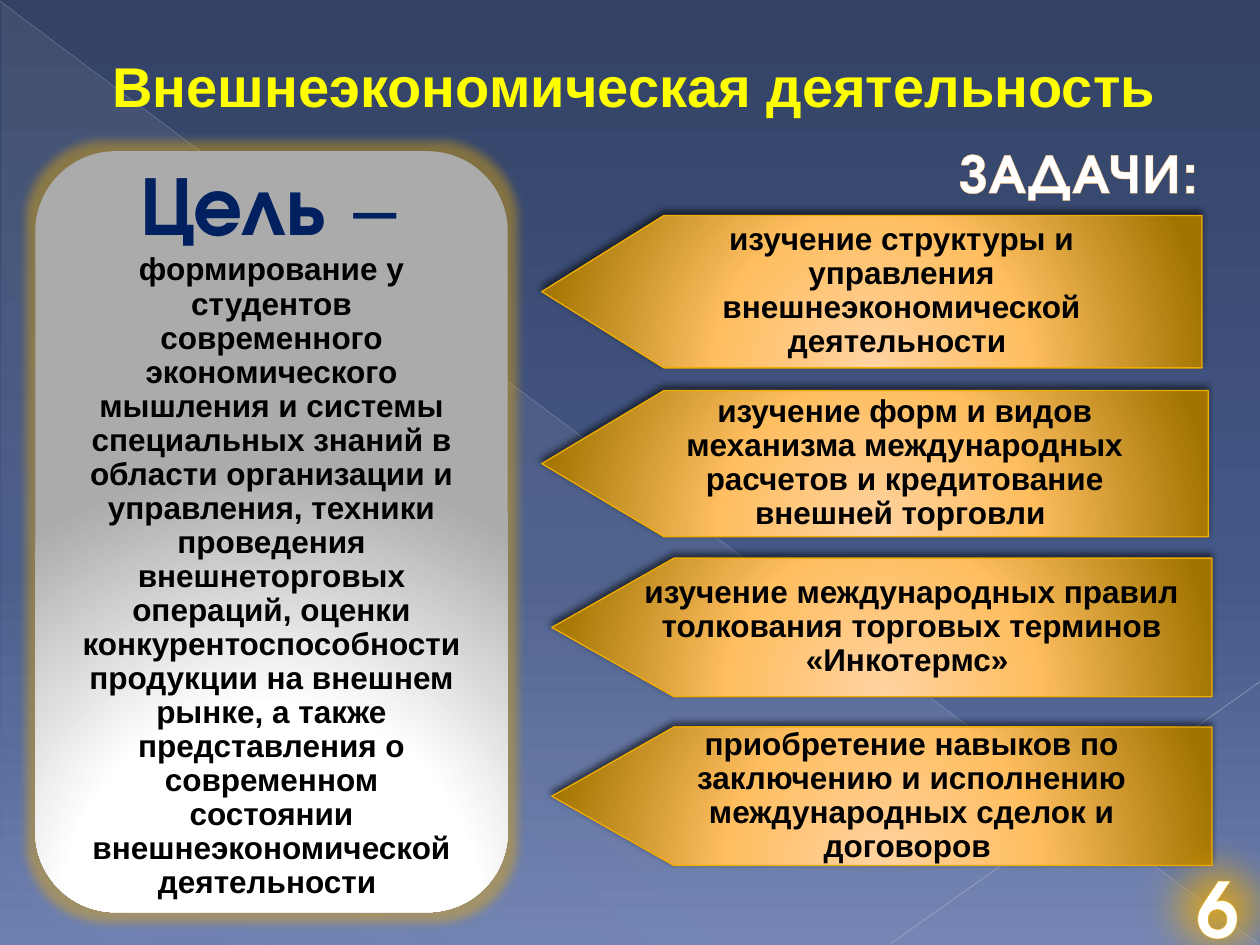
from dataclasses import dataclass

from lxml.etree import SubElement
from pptx import Presentation
from pptx.dml.color import RGBColor
from pptx.enum.shapes import MSO_CONNECTOR, MSO_SHAPE
from pptx.enum.text import MSO_ANCHOR, PP_ALIGN
from pptx.oxml.ns import qn
from pptx.util import Inches, Pt


@dataclass(frozen=True)
class Theme:
    """Colours, fonts and type sizes of the slide."""
    background: tuple = ((0, "334265"), (60, "445887"), (100, "6C7FB1"))
    veil: tuple = ((0, "D4D4D6", 10), (70, "D4D4D6", 8), (100, "D4D4D6", 1))
    gold: tuple = ((0, "FFD3A2"), (46, "FFBE60"), (100, "A17400"))
    silver: tuple = ((0, "FFFFFF"), (46, "FFFFFF"), (100, "ABABAB"))
    amber: str = "F0AD00"
    peach: str = "FFC780"
    yellow: str = "FFFF00"
    navy: str = "002060"
    black: str = "000000"
    white: str = "FFFFFF"
    body_font: str = "Arial"
    display_font: str = "TeX Gyre Adventor"
    body_size: int = 18
    heading_size: int = 32
    number_size: int = 44
    goal_size: int = 48


@dataclass(frozen=True)
class Task:
    """One arrow-shaped task with its box in inches."""
    text: str
    left: float
    top: float
    width: float
    height: float


@dataclass(frozen=True)
class Ray:
    """One faint background line, ends in inches."""
    start: tuple
    end: tuple
    color: str
    width: float
    opacity: int


THEME = Theme()
TIP = 0.97
TASKS = (
    Task("изучение структуры и управления внешнеэкономической деятельности ", 4.3, 1.71, 5.24, 1.21),
    Task("изучение форм и видов механизма международных расчетов и кредитование "
         "внешней торговли ", 4.3, 3.1, 5.29, 1.16),
    Task("изучение международных правил толкования торговых терминов «Инкотермс» ",
         4.38, 4.43, 5.24, 1.1),
    Task("приобретение навыков по заключению и исполнению международных сделок и "
         "договоров ", 4.38, 5.77, 5.24, 1.1),
)
RAYS = (
    Ray((0, 0.01), (9.99, 7.49), "B9BDC8", 0.39, 35),
    Ray((10, 5.41), (7.07, 7.49), "C1C4CE", 0.47, 45),
)
GOAL = (
    "формирование у студентов современного экономического мышления и системы "
    "специальных знаний в области организации и управления, техники проведения "
    "внешнеторговых операций, оценки конкурентоспособности продукции на внешнем "
    "рынке, а также представления о современном состоянии внешнеэкономической "
    "деятельности "
)


def add_color(parent, color: str, opacity: int = 100) -> None:
    """Append a colour with its opacity in percent."""
    element = SubElement(parent, qn("a:srgbClr"), val=color)
    if opacity < 100:
        SubElement(element, qn("a:alpha"), val=str(opacity * 1000))


def set_gradient(fill, owner, stops: tuple, angle: int | None = None) -> None:
    """Fill the owner element with a linear gradient, or a radial one without angle."""
    fill.solid()
    solid = next(owner.iter(qn("a:solidFill")))
    gradient = solid.makeelement(qn("a:gradFill"), {"rotWithShape": "1"})
    stop_list = SubElement(gradient, qn("a:gsLst"))
    for position, *color in stops:
        add_color(SubElement(stop_list, qn("a:gs"), pos=str(position * 1000)), *color)
    if angle is None:
        radial = SubElement(gradient, qn("a:path"), path="circle")
        SubElement(radial, qn("a:fillToRect"), l="50000", t="155000", r="50000", b="-55000")
    else:
        SubElement(gradient, qn("a:lin"), ang=str(angle * 60000), scaled="0")
    solid.getparent().replace(solid, gradient)


def add_effect(shape, name: str, color: str = "", opacity: int = 100, **settings: int) -> None:
    """Give the shape one effect in place of the inherited shadow."""
    shape.shadow.inherit = False
    effects = shape.element.spPr.find(qn("a:effectLst"))
    values = {key: str(int(value)) for key, value in settings.items()}
    effect = SubElement(effects, qn(f"a:{name}"), values)
    if color:
        add_color(effect, color, opacity)


def add_run(paragraph, text: str, *, size: int, color: str, font: str = THEME.body_font,
            bold: bool = True, outline: tuple | None = None, spacing: int = 0) -> None:
    """Append formatted text to a paragraph."""
    run = paragraph.add_run()
    run.text = text
    run.font.name, run.font.size, run.font.bold = font, Pt(size), bold
    run.font.color.rgb = RGBColor.from_string(color)
    properties = run.font._element
    if spacing:
        properties.set("spc", str(spacing * 100))
    if outline:
        outline_color, width = outline
        line = properties.makeelement(qn("a:ln"), {"w": str(int(Pt(width)))})
        add_color(SubElement(line, qn("a:solidFill")), outline_color)
        properties.insert(0, line)


def prepare_text(shape, *, insets: tuple = (0.1, 0.05, 0.1, 0.05), anchor=MSO_ANCHOR.MIDDLE,
                 align=PP_ALIGN.CENTER, dense: bool = False):
    """Set up the text frame and return its first paragraph."""
    frame = shape.text_frame
    frame.word_wrap = True
    frame.vertical_anchor = anchor
    frame.margin_left, frame.margin_top, frame.margin_right, frame.margin_bottom = map(Inches, insets)
    paragraph = frame.paragraphs[0]
    paragraph.alignment = align
    if dense:
        paragraph.line_spacing = 0.9
        paragraph.space_after = Pt(6)
    return paragraph


def add_heading(slide, text: str, box: tuple, align, **style) -> None:
    """Draw a heading in a text box."""
    shape = slide.shapes.add_textbox(*map(Inches, box))
    paragraph = prepare_text(shape, anchor=MSO_ANCHOR.TOP, align=align)
    add_run(paragraph, text, size=THEME.heading_size, **style)


def add_backdrop(slide) -> None:
    """Draw the background gradient, the veil and the rays."""
    set_gradient(slide.background.fill, slide.element, THEME.background, 90)
    veil = slide.shapes.add_shape(MSO_SHAPE.RIGHT_TRIANGLE, *map(Inches, (0.01, 0.02, 9.99, 7.48)))
    set_gradient(veil.fill, veil.element.spPr, THEME.veil, 133)
    veil.line.fill.background()
    veil.shadow.inherit = False
    for ray in RAYS:
        line = slide.shapes.add_connector(MSO_CONNECTOR.STRAIGHT, *map(Inches, ray.start + ray.end))
        line.line.width = Pt(ray.width)
        line.line.color.rgb = RGBColor.from_string(ray.color)
        color = next(line.element.spPr.iter(qn("a:srgbClr")))
        SubElement(color, qn("a:alpha"), val=str(ray.opacity * 1000))
        SubElement(line.element.spPr, qn("a:effectLst"))


def add_task(slide, task: Task) -> None:
    """Draw a task as an arrow pointing left."""
    right, bottom = task.left + task.width, task.top + task.height
    shoulder, middle = task.left + TIP, task.top + task.height / 2
    corners = ((shoulder, bottom), (task.left, middle), (shoulder, task.top), (right, task.top))
    builder = slide.shapes.build_freeform(Inches(right), Inches(bottom))
    builder.add_line_segments([(Inches(x), Inches(y)) for x, y in corners], close=True)
    shape = builder.convert_to_shape()
    set_gradient(shape.fill, shape.element.spPr, THEME.gold)
    shape.line.color.rgb = RGBColor.from_string(THEME.amber)
    shape.line.width = Pt(0.75)
    add_effect(shape, "outerShdw", THEME.black, 60, blurRad=Pt(4), dist=Pt(3), dir=245 * 60000)
    paragraph = prepare_text(shape, insets=(0.73, 0.14, 0.26, 0.14), dense=True)
    add_run(paragraph, task.text, size=THEME.body_size, color=THEME.black)


def add_goal(slide) -> None:
    """Draw the glowing card with the goal."""
    card = slide.shapes.add_shape(MSO_SHAPE.ROUNDED_RECTANGLE, *map(Inches, (0.28, 1.2, 3.75, 6.04)))
    card.adjustments[0] = 0.17
    set_gradient(card.fill, card.element.spPr, THEME.silver)
    card.line.fill.background()
    add_effect(card, "glow", THEME.amber, 40, rad=Pt(11))
    paragraph = prepare_text(card, insets=(0.18, 0.08, 0.18, 0.08), dense=True)
    display = {"font": THEME.display_font, "color": THEME.navy}
    add_run(paragraph, "Цель", size=THEME.goal_size, **display)
    add_run(paragraph, " − ", size=THEME.number_size, bold=False, **display)
    add_run(paragraph, GOAL, size=THEME.body_size, color=THEME.black)


def add_number(slide, text: str) -> None:
    """Draw the slide number on a soft round spot."""
    spot = slide.shapes.add_shape(MSO_SHAPE.OVAL, *map(Inches, (8.88, 6.45, 1.57, 1.5)))
    set_gradient(spot.fill, spot.element.spPr, ((0, THEME.amber, 79), (100, THEME.amber, 79)), 0)
    spot.line.fill.background()
    add_effect(spot, "softEdge", rad=Pt(25))
    add_run(prepare_text(spot), text, size=THEME.number_size, color=THEME.white,
            font=THEME.display_font, outline=(THEME.amber, 0.8))


def main() -> None:
    """Build and save the slide."""
    presentation = Presentation()
    presentation.slide_width, presentation.slide_height = Inches(10), Inches(7.5)
    slide = presentation.slides.add_slide(presentation.slide_layouts[6])
    add_backdrop(slide)
    add_heading(slide, "Внешнеэкономическая деятельность", (0.35, 0.36, 9.37, 0.63),
                PP_ALIGN.CENTER, color=THEME.yellow)
    add_goal(slide)
    add_heading(slide, "ЗАДАЧИ:", (7.51, 1.04, 2.48, 0.64), PP_ALIGN.LEFT, color=THEME.white,
                font=THEME.display_font, outline=(THEME.peach, 2.48), spacing=1)
    for task in TASKS:
        add_task(slide, task)
    add_number(slide, "6")
    presentation.save("out.pptx")


if __name__ == "__main__":
    main()
